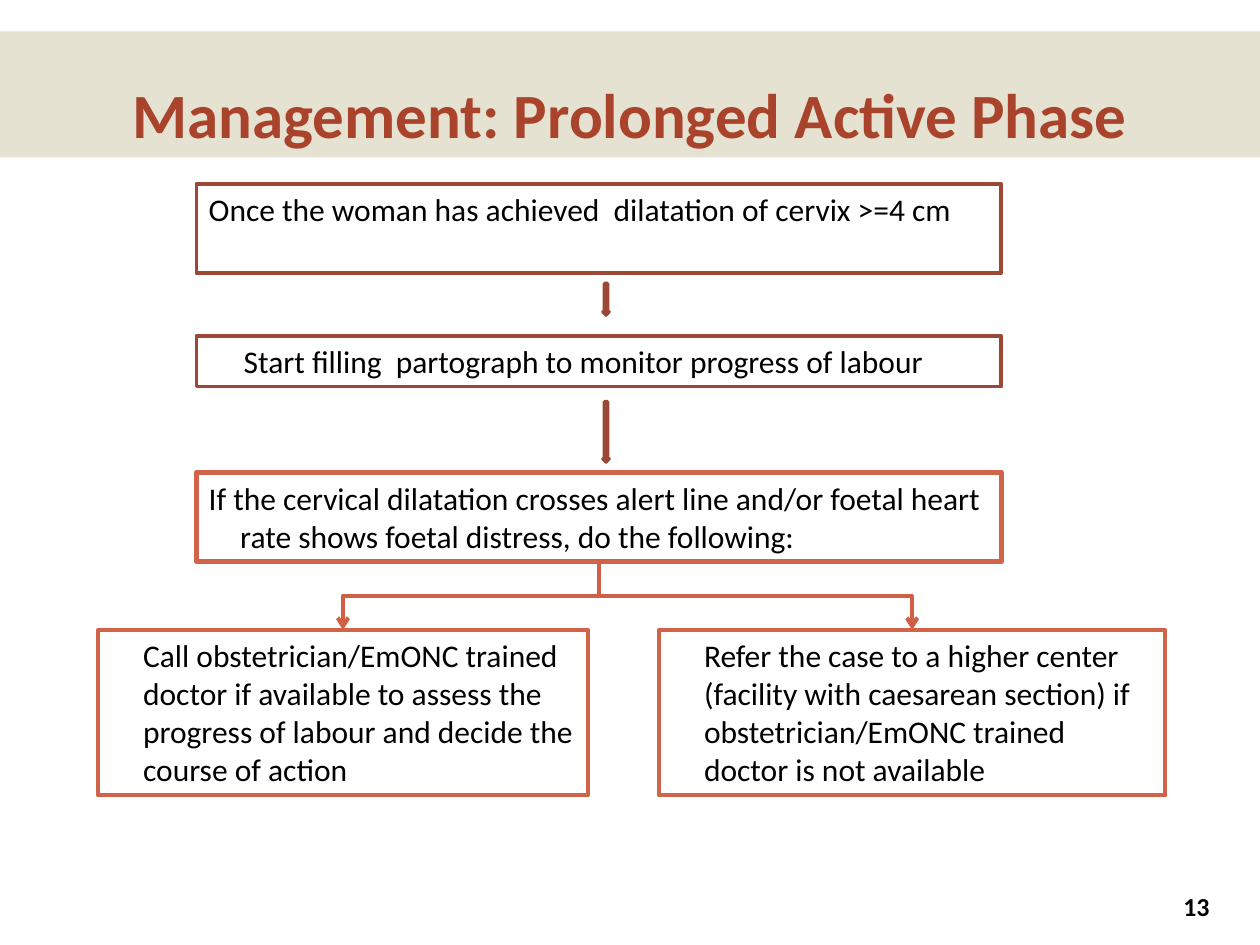
import pptx
import pptx.util
import pptx.dml.color
import pptx.enum.shapes
import pptx.enum.text
import pptx.oxml
import pptx.oxml.ns

Pt = pptx.util.Pt
SHAPES = pptx.enum.shapes.MSO_SHAPE
ALIGN = pptx.enum.text.PP_ALIGN
ANCHOR = pptx.enum.text.MSO_ANCHOR
BROWN, CORAL, BRANCH = "9B4936", "D16349", "D05F44"


def color(value):
    """Turn a hex string into a colour."""
    return pptx.dml.color.RGBColor.from_string(value)


def add_xml(parent, tag, **attributes):
    """Append a DrawingML element to a parent and return it."""
    element = pptx.oxml.parse_xml(f"<a:{tag} {pptx.oxml.ns.nsdecls('a')}/>")
    for key, value in attributes.items():
        element.set(key, value)
    parent.append(element)
    return element


def add_block(slide, kind, box, fill=None, line=None, weight=2):
    """Draw a preset shape with an optional fill and outline."""
    block = slide.shapes.add_shape(kind, *(Pt(v) for v in box))
    block.shadow.inherit = False
    if fill:
        block.fill.solid()
        block.fill.fore_color.rgb = color(fill)
    else:
        block.fill.background()
    if line:
        block.line.color.rgb = color(line)
        block.line.width = Pt(weight)
    else:
        block.line.fill.background()
    return block


def write(block, text, size, ink="000000", bold=False, align=ALIGN.LEFT,
          anchor=ANCHOR.TOP, margin=0, indent=0):
    """Put one styled paragraph into a shape."""
    frame = block.text_frame
    frame.word_wrap = True
    frame.vertical_anchor = anchor
    paragraph = frame.paragraphs[0]
    paragraph.text = text
    paragraph.alignment = align
    properties = paragraph._p.get_or_add_pPr()
    properties.set("marL", str(Pt(margin)))
    properties.set("indent", str(Pt(indent)))
    font = paragraph.font
    font.name, font.size, font.bold = "Calibri", Pt(size), bold
    font.color.rgb = color(ink)


def add_header(slide, box, title):
    """Draw the translucent title band and its heading."""
    left, top, width, height = box
    band = add_block(slide, SHAPES.RECTANGLE, box, fill="DDD9C3")
    tint = band._element.spPr.find(".//" + pptx.oxml.ns.qn("a:srgbClr"))
    add_xml(tint, "alpha", val="76000")
    side = 21.6
    heading = slide.shapes.add_textbox(
        Pt(left + side), Pt(top), Pt(width - 2 * side), Pt(height))
    write(heading, title, 36, "A9432B", True, ALIGN.CENTER, ANCHOR.BOTTOM)


def add_branch(slide, start, end):
    """Run an elbow arrow down from start, across, and down to end."""
    (x1, y1), (x2, y2) = start, end
    drop, reach = y2 - y1, abs(x2 - x1)
    left = (x1 + x2 - drop) / 2
    top = (y1 + y2 - reach) / 2
    branch = slide.shapes.add_connector(
        pptx.enum.shapes.MSO_CONNECTOR.ELBOW,
        Pt(left), Pt(top), Pt(left + drop), Pt(top + reach))
    frame = branch._element.spPr.find(pptx.oxml.ns.qn("a:xfrm"))
    frame.set("rot", "5400000" if x2 < x1 else "16200000")
    if x2 > x1:
        frame.set("flipH", "1")
    branch.line.color.rgb = color(BRANCH)
    branch.line.width = Pt(2.25)
    add_xml(branch.line._get_or_add_ln(), "tailEnd", type="arrow")
    add_xml(branch._element.spPr, "effectLst")


def add_flowchart(slide, box):
    """Stack the three steps, then branch to the two actions."""
    left, top, width, height = box
    steps_left, steps_width = left + 56.2, 460
    center = steps_left + steps_width / 2
    steps = [
        ("Once the woman has achieved  dilatation of cervix >=4 cm",
         0, 51, BROWN, 2, 0, 0),
        ("Start filling  partograph to monitor progress of labour",
         87, 29, BROWN, 2, 20, 0),
        ("If the cervical dilatation crosses alert line and/or foetal heart "
         "rate shows foetal distress, do the following:",
         165, 51, CORAL, 3, 18, -18),
    ]
    for text, offset, step_height, line, weight, margin, indent in steps:
        step = add_block(
            slide, SHAPES.RECTANGLE,
            (steps_left, top + offset, steps_width, step_height),
            line=line, weight=weight)
        write(step, text, 18, margin=margin, indent=indent)

    for offset, length in ((57, 18), (124.5, 34.5)):
        add_block(slide, SHAPES.DOWN_ARROW,
                  (center + 2.3, top + offset, 3.6, length), CORAL, BROWN)

    actions_height = 94.5
    actions_top = top + height - actions_height
    right_width = 289.5
    actions = [
        ("Call obstetrician/EmONC trained doctor if available to assess the "
         "progress of labour and decide the course of action", left, 280),
        ("Refer the case to a higher center (facility with caesarean section) "
         "if obstetrician/EmONC trained doctor is not available",
         left + width - right_width, right_width),
    ]
    for text, action_left, action_width in actions:
        action = add_block(
            slide, SHAPES.RECTANGLE,
            (action_left, actions_top, action_width, actions_height),
            line=CORAL, weight=2.25)
        write(action, text, 18, margin=18.7)
        add_branch(slide, (center, top + 216),
                   (action_left + action_width / 2, actions_top))


def add_page_number(slide, box, number):
    """Write the page number."""
    page = slide.shapes.add_textbox(*(Pt(v) for v in box))
    write(page, number, 14.8, bold=True, align=ALIGN.RIGHT,
          anchor=ANCHOR.MIDDLE)


def main():
    """Build and save the slide."""
    deck = pptx.Presentation()
    deck.slide_width, deck.slide_height = Pt(720), Pt(540)
    slide = deck.slides.add_slide(deck.slide_layouts[6])
    add_header(slide, (0, 18, 720, 72), "Management: Prolonged Active Phase")
    add_flowchart(slide, (56, 105, 610, 349.5))
    add_page_number(slide, (629.3, 506.2, 69, 23), "13")
    deck.save("out.pptx")


if __name__ == "__main__":
    main()
